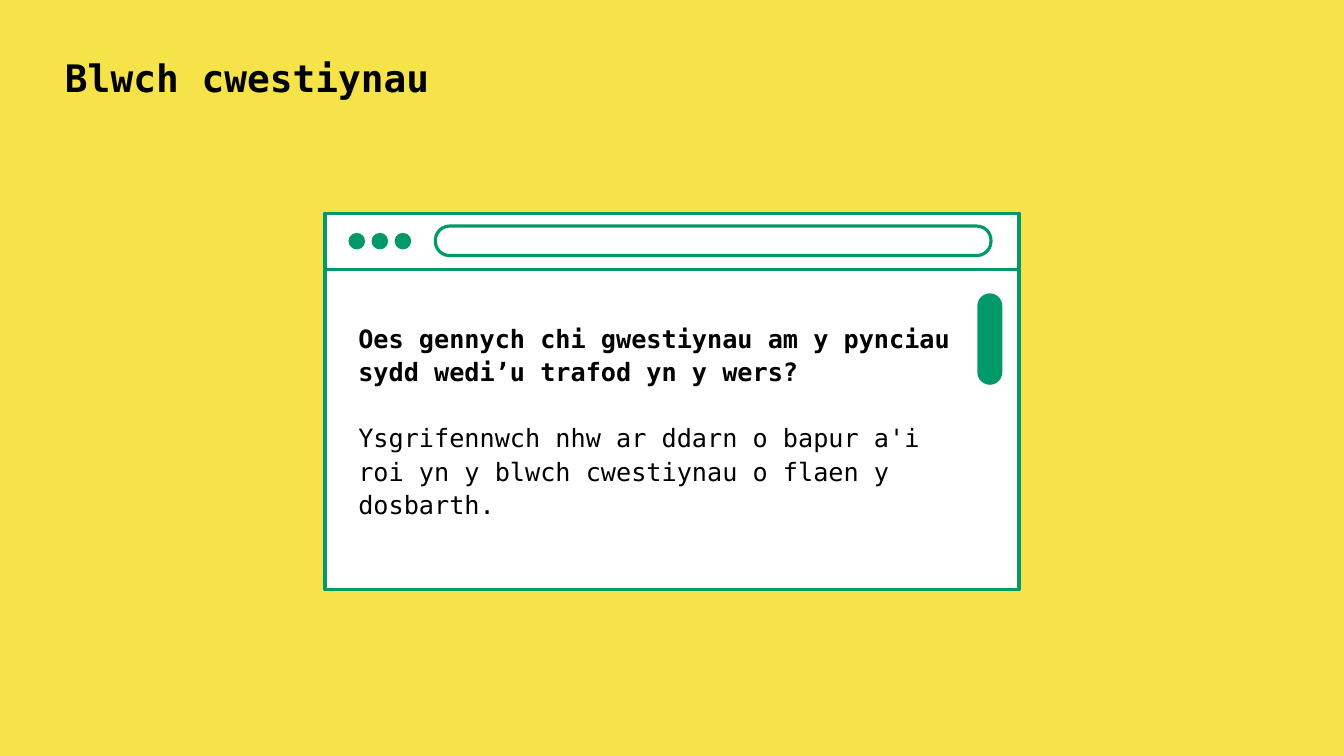
from pptx import Presentation
from pptx.dml.color import RGBColor
from pptx.enum.shapes import MSO_SHAPE
from pptx.enum.text import MSO_ANCHOR, MSO_AUTO_SIZE, PP_ALIGN
from pptx.util import Inches, Pt

# Content
TITLE = "Blwch cwestiynau"
LINES = [
    ("Oes gennych chi gwestiynau am y pynciau sydd wedi’u trafod yn y wers?", True),
    ("Ysgrifennwch nhw ar ddarn o bapur a'i roi yn y blwch cwestiynau "
     "o flaen y dosbarth.", False),
]

FONT = "DejaVu Sans Mono"
YELLOW = RGBColor(0xF6, 0xE2, 0x49)
GREEN = RGBColor(0x01, 0x99, 0x67)
WHITE = RGBColor(0xFF, 0xFF, 0xFF)
BLACK = RGBColor(0, 0, 0)

# Window geometry, in inches
WIDE, HIGH = 17.78, 10
WIN_W, WIN_H, BAR_H = 9.18, 4.98, 0.74
LEFT, TOP = (WIDE - WIN_W) / 2, 2.82
DOT, STEP = 0.22, 0.305
PAD = 0.31


def box(pool, kind, x, y, w, h, fill=None, line=None, round_by=None):
    shape = pool.add_shape(kind, Inches(x), Inches(y), Inches(w), Inches(h))
    shape.shadow.inherit = False
    if fill is None:
        shape.fill.background()
    else:
        shape.fill.solid()
        shape.fill.fore_color.rgb = fill
    if line is None:
        shape.line.fill.background()
    else:
        shape.line.color.rgb = line
        shape.line.width = Pt(3)
    if round_by is not None:
        shape.adjustments[0] = round_by


def style(para, size, bold):
    para.alignment = PP_ALIGN.LEFT
    for run in para.runs:
        run.font.name = FONT
        run.font.size = Pt(size)
        run.font.bold = bold
        run.font.color.rgb = BLACK


def setup(frame, side, edge):
    frame.word_wrap = True
    frame.auto_size = MSO_AUTO_SIZE.NONE
    frame.vertical_anchor = MSO_ANCHOR.TOP
    frame.margin_left = frame.margin_right = Inches(side)
    frame.margin_top = frame.margin_bottom = Inches(edge)


deck = Presentation()
deck.slide_width, deck.slide_height = Inches(WIDE), Inches(HIGH)
slide = deck.slides.add_slide(deck.slide_layouts[5])
slide.background.fill.solid()
slide.background.fill.fore_color.rgb = YELLOW

# Title
title = slide.shapes.title
title.left, title.top = Inches(0.76), Inches(0.67)
title.width, title.height = Inches(10.23), Inches(3.62)
title.text_frame.text = TITLE
setup(title.text_frame, 0.1, 0.05)
style(title.text_frame.paragraphs[0], 36, True)

# Browser window: page, top bar, scroll bar
pool = slide.shapes.add_group_shape().shapes
for high in (WIN_H, BAR_H):
    box(pool, MSO_SHAPE.RECTANGLE, LEFT, TOP, WIN_W, high, WHITE, GREEN)
box(pool, MSO_SHAPE.ROUNDED_RECTANGLE, LEFT + 8.63, TOP + 1.06, 0.33, 1.21,
    GREEN, round_by=0.5)

# Buttons and address field
for i in range(3):
    box(pool, MSO_SHAPE.OVAL, LEFT + PAD + i * STEP, TOP + (BAR_H - DOT) / 2,
        DOT, DOT, GREEN)
box(pool, MSO_SHAPE.ROUNDED_RECTANGLE, LEFT + 1.46, TOP + 0.17, 7.35, 0.39,
    line=GREEN, round_by=0.48)

# Message
note = pool.add_textbox(Inches(LEFT + PAD), Inches(TOP + 1.35),
                        Inches(8.21), Inches(2.5))
frame = note.text_frame
setup(frame, 0.13, 0.07)
for i, (text, bold) in enumerate(LINES):
    para = frame.add_paragraph() if i else frame.paragraphs[0]
    para.text = text
    para.line_spacing = 1.1
    if i:
        para.space_before = Pt(31)
    style(para, 24, bold)

deck.save("out.pptx")
